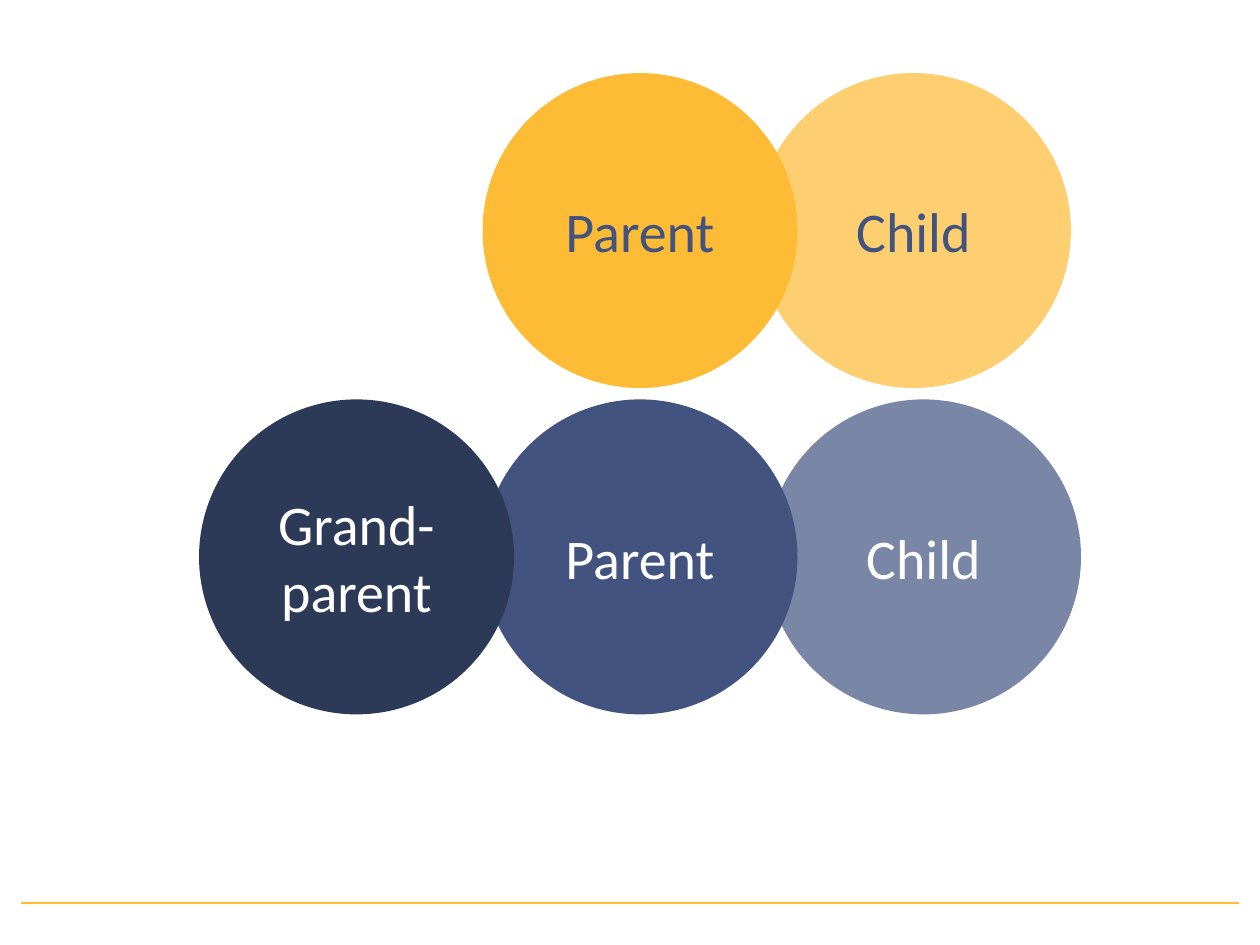
from lxml import etree
from pptx import Presentation
from pptx.dml.color import RGBColor
from pptx.enum.shapes import MSO_CONNECTOR, MSO_SHAPE
from pptx.enum.text import MSO_ANCHOR, PP_ALIGN
from pptx.oxml.ns import qn
from pptx.util import Inches, Pt

COLORS = {"gold": "FEBB36", "blue": "42537F", "navy": "2C3957", "white": "FFFFFF"}
FONT = {"name": "Calibri", "size": Pt(32)}
DIAMETER = Inches(2.5)
TOP_ROW, BOTTOM_ROW = 0.58, 3.17

prs = Presentation()
prs.slide_width, prs.slide_height = Inches(10), Inches(7.5)
s = prs.slides.add_slide(prs.slide_layouts[6])

rule = s.shapes.add_connector(
    MSO_CONNECTOR.STRAIGHT, Inches(9.83), Inches(7.17), Inches(0.17), Inches(7.17)
)
rule.line.color.rgb = RGBColor.from_string(COLORS["gold"])
rule.line.width = Pt(1.25)
etree.SubElement(rule._element.spPr, qn("a:effectLst"))

circles = [
    ("Parent", 3.83, TOP_ROW, "gold", "blue", 100),
    ("Parent", 3.83, BOTTOM_ROW, "blue", "white", 100),
    ("Child", 6, TOP_ROW, "gold", "blue", 70),
    ("Child", 6.08, BOTTOM_ROW, "blue", "white", 70),
    ("Grand-parent", 1.58, BOTTOM_ROW, "navy", "white", 100),
]
for label, left, top, fill, ink, opacity in circles:
    sp = s.shapes.add_shape(
        MSO_SHAPE.OVAL, Inches(left), Inches(top), DIAMETER, DIAMETER
    )
    sp.shadow.inherit = False
    sp.line.fill.background()
    sp.fill.solid()
    sp.fill.fore_color.rgb = RGBColor.from_string(COLORS[fill])
    if opacity < 100:
        color = sp._element.spPr.find(qn("a:solidFill")).find(qn("a:srgbClr"))
        etree.SubElement(color, qn("a:alpha"), val=str(opacity * 1000))

    tf = sp.text_frame
    tf.word_wrap = True
    tf.vertical_anchor = MSO_ANCHOR.MIDDLE
    p = tf.paragraphs[0]
    p.alignment = PP_ALIGN.CENTER
    r = p.add_run()
    r.text = label
    for name, value in FONT.items():
        setattr(r.font, name, value)
    r.font.color.rgb = RGBColor.from_string(COLORS[ink])

prs.save("out.pptx")
